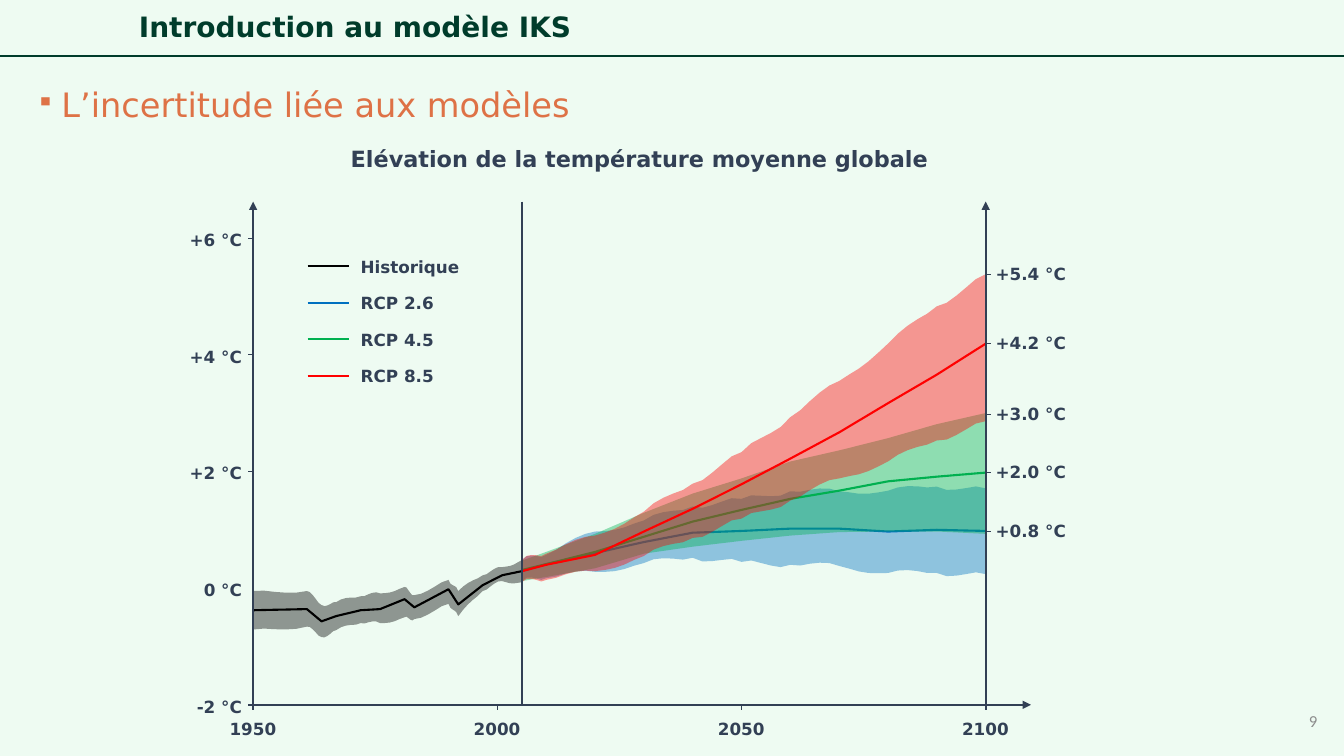
from math import sin
from lxml import etree
from pptx import Presentation
from pptx.dml.color import RGBColor
from pptx.enum.shapes import MSO_CONNECTOR as LINK
from pptx.enum.text import MSO_ANCHOR as ANCHOR, PP_ALIGN as ALIGN
from pptx.oxml.ns import qn
from pptx.util import Cm, Pt

MINT = RGBColor(0xEE, 0xFB, 0xF2)
PINE = RGBColor(0x00, 0x3C, 0x2B)
RUST = RGBColor(0xDE, 0x72, 0x46)
SLATE = RGBColor(0x32, 0x40, 0x55)
GREY = RGBColor(0x8C, 0x8C, 0x8C)
BLACK = RGBColor(0x00, 0x00, 0x00)
BLUE = RGBColor(0x00, 0x70, 0xC0)
GREEN = RGBColor(0x00, 0xB0, 0x50)
RED = RGBColor(0xFF, 0x00, 0x00)

deck = Presentation()
deck.slide_width, deck.slide_height = Cm(33.87), Cm(19.05)
slide = deck.slides.add_slide(deck.slide_layouts[6])
slide.background.fill.solid()
slide.background.fill.fore_color.rgb = MINT
shapes = slide.shapes


def rule(x1, y1, x2, y2, color=SLATE, width=1.5, arrow=False):
    line = shapes.add_connector(LINK.STRAIGHT, Cm(x1), Cm(y1), Cm(x2), Cm(y2))
    line.line.color.rgb = color
    line.line.width = Pt(width)
    if arrow:
        etree.SubElement(line.line._get_or_add_ln(), qn("a:tailEnd"), type="triangle")
    etree.SubElement(line._element.spPr, qn("a:effectLst"))


def note(text, x, y, w, h=0.76, align=ALIGN.LEFT, size=12, color=SLATE,
         bold=True, face="DejaVu Sans", wrap=False):
    frame = shapes.add_textbox(Cm(x), Cm(y), Cm(w), Cm(h)).text_frame
    frame.word_wrap = wrap
    frame.vertical_anchor = ANCHOR.MIDDLE
    para = frame.paragraphs[0]
    para.alignment = align
    run = para.add_run()
    run.text = text
    font = run.font
    font.name, font.size, font.bold = face, Pt(size), bold
    font.color.rgb = color
    return frame


rule(0, 1.41, 33.87, 1.41, PINE)
note("Introduction au modèle IKS", 3.25, 0.15, 29.2, 1.02, size=20, color=PINE, wrap=True)
body = note("L’incertitude liée aux modèles", 0.66, 2.1, 33.2, 16.95,
            size=24, color=RUST, bold=False, wrap=True)
body.vertical_anchor = ANCHOR.TOP
lead = body.paragraphs[0]
lead.line_spacing = 0.9
props = lead._p.get_or_add_pPr()
props.set("marL", str(Cm(0.64)))
props.set("indent", str(-Cm(0.64)))
etree.SubElement(props, qn("a:buSzPct"), val="75000")
etree.SubElement(props, qn("a:buChar"), char="▪")
note("9", 25.83, 17.65, 7.62, 1.02, ALIGN.RIGHT, color=GREY, bold=False, face="Calibri", wrap=True)
note("Elévation de la température moyenne globale", 8.56, 3.53, 15.11, 0.94,
     ALIGN.CENTER, size=16)

left, right, top, base = 6.38, 24.84, 5.08, 17.76
start, split, end = 1950, 2005, 2100
coldest = -2
per_year = (right - left) / (end - start)
per_degree = 1.47
zero = base + coldest * per_degree

past = (1950, 1961, 1964, 1967, 1972, 1976, 1981, 1983, 1990, 1992, 1997, 2001, 2005)
future = (split, *range(2010, end + 1, 10))
scenarios = (
    {"color": BLUE, "years": future, "ripple": 0.05,
     "low": (0.12, 0.17, 0.28, 0.43, 0.52, 0.45, 0.4, 0.38, 0.26, 0.26, 0.24),
     "mean": (0.29, 0.41, 0.6, 0.79, 0.95, 0.98, 1.02, 1.02, 0.97, 1, 0.98),
     "high": (0.48, 0.57, 0.97, 1.16, 1.4, 1.53, 1.66, 1.66, 1.67, 1.74, 1.71)},
    {"color": GREEN, "years": future, "ripple": 0,
     "low": (0.12, 0.19, 0.34, 0.59, 0.71, 0.81, 0.9, 0.96, 0.97, 0.97, 0.93),
     "mean": (0.31, 0.41, 0.62, 0.88, 1.14, 1.34, 1.53, 1.67, 1.83, 1.91, 1.98),
     "high": (0.47, 0.62, 0.93, 1.29, 1.62, 1.88, 2.17, 2.36, 2.57, 2.81, 3)},
    {"color": BLACK, "years": past, "ripple": 0.03,
     "low": (-0.71, -0.66, -0.84, -0.72, -0.6, -0.6, -0.5, -0.53, -0.27, -0.48, -0.05, 0.12, 0.1),
     "mean": (-0.38, -0.36, -0.57, -0.48, -0.38, -0.36, -0.19, -0.33, -0.02, -0.28, 0.05, 0.22, 0.29),
     "high": (-0.05, -0.05, -0.29, -0.24, -0.14, -0.09, 0.02, -0.12, 0.14, -0.05, 0.22, 0.36, 0.48)},
    {"color": RED, "years": future, "ripple": 0.05,
     "low": (0.1, 0.14, 0.29, 0.55, 0.86, 1.19, 1.5, 1.88, 2.17, 2.53, 2.86),
     "mean": (0.29, 0.4, 0.57, 0.97, 1.36, 1.78, 2.22, 2.67, 3.17, 3.66, 4.19),
     "high": (0.48, 0.59, 0.9, 1.31, 1.79, 2.33, 2.93, 3.55, 4.19, 4.83, 5.38)})

steps = 5
for case in scenarios:
    years = case["years"]
    curves = {}
    for name in ("low", "mean", "high"):
        knots = list(zip(years, case[name]))
        ripple = 0 if name == "mean" else case["ripple"]
        curve = []
        for (year, temp), (year2, temp2) in zip(knots, knots[1:]):
            for i in range(steps):
                part = i / steps
                wave = ripple * sin(7 * i + year) if i else 0
                curve.append((year + (year2 - year) * part, temp + (temp2 - temp) * part + wave))
        curve.append(knots[-1])
        curves[name] = [(Cm(left + (year - start) * per_year), Cm(zero - temp * per_degree))
                        for year, temp in curve]
    for points, closed in ((curves["high"] + curves["low"][::-1], True), (curves["mean"], False)):
        pen = shapes.build_freeform(*points[0])
        pen.add_line_segments(points[1:], close=closed)
        trace = pen.convert_to_shape()
        trace.shadow.inherit = False
        if closed:
            trace.fill.solid()
            trace.fill.fore_color.rgb = case["color"]
            tint = trace.fill._xPr.find(qn("a:solidFill"))[0]
            etree.SubElement(tint, qn("a:alpha"), val="40000")
            trace.line.fill.background()
        else:
            trace.fill.background()
            trace.line.color.rgb = case["color"]
            trace.line.width = Pt(1.5)

tick = 0.13
now = left + (split - start) * per_year
rule(left, base + tick, left, top, arrow=True)
rule(left - tick, base, 25.98, base, arrow=True)
rule(now, top, now, base)
rule(right, base + tick, right, top, arrow=True)

for i, (text, w) in enumerate((("-2 °C", 1.73), ("0 °C", 1.52), ("+2 °C", 1.88),
                               ("+4 °C", 1.88), ("+6 °C", 1.88))):
    y = base - 2 * per_degree * i
    if i > 1:
        rule(left - tick, y, left, y, width=0.5)
    note(text, 6.35 - w, y - 0.34, w, align=ALIGN.RIGHT)

for year in range(start, end + 1, 50):
    x = left + (year - start) * per_year
    if year > start:
        rule(x, base, x, base + tick, width=0.5)
    note(str(year), x - 0.87, 17.98, 1.73, align=ALIGN.CENTER)

for text, temp in (("+5.4 °C", 5.38), ("+4.2 °C", 4.19), ("+3.0 °C", 2.98),
                   ("+2.0 °C", 1.98), ("+0.8 °C", 0.97)):
    y = zero - temp * per_degree
    rule(right, y, right + tick, y, width=0.5)
    note(text, right, y - 0.4, 2.34)

for i, (text, color, w) in enumerate((("Historique", BLACK, 3), ("RCP 2.6", BLUE, 2.36),
                                      ("RCP 4.5", GREEN, 2.36), ("RCP 8.5", RED, 2.36))):
    y = 6.71 + 0.92 * i
    rule(7.75, y, 8.79, y, color)
    note(text, 8.84, y - 0.37, w)

deck.save("out.pptx")
